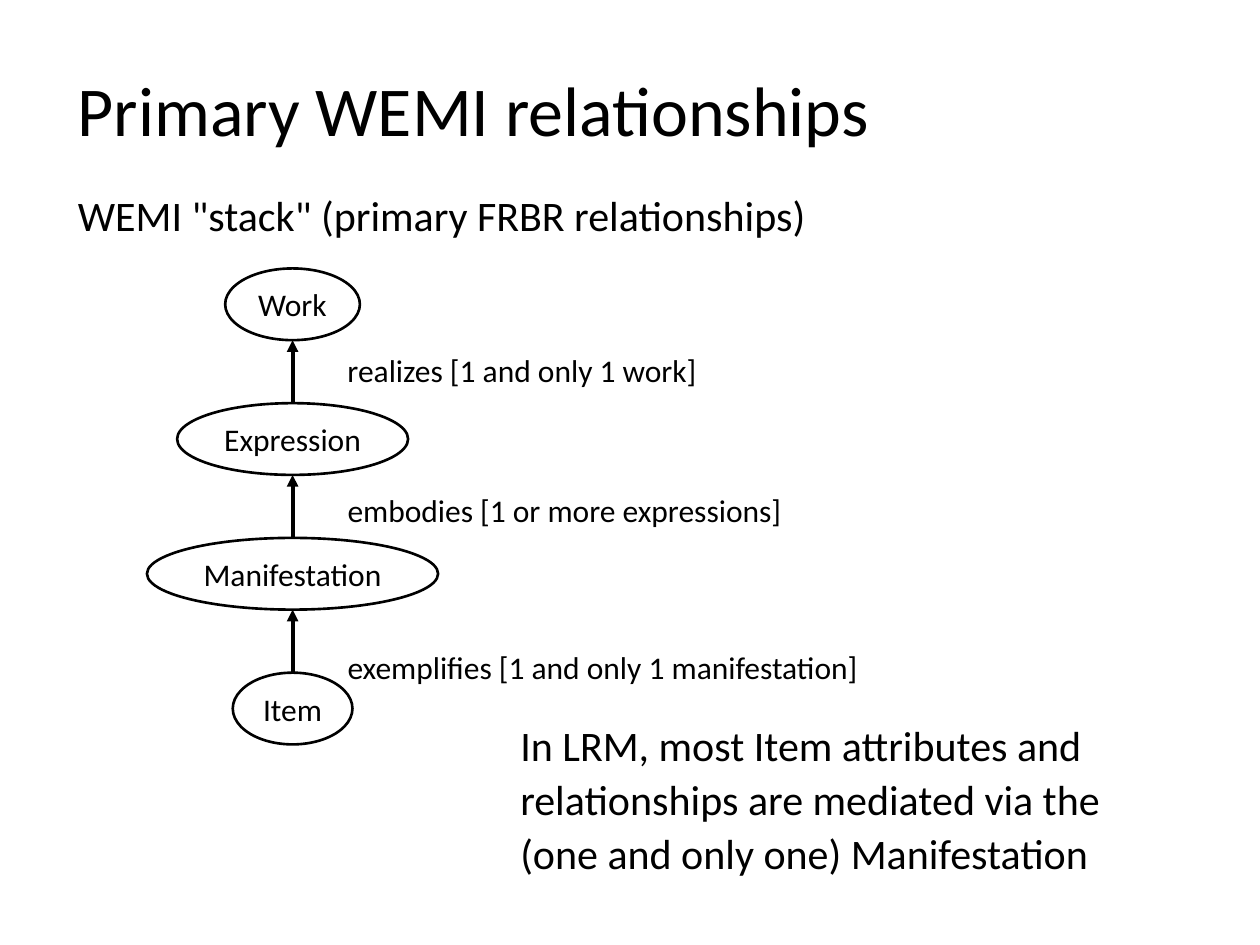
from dataclasses import dataclass

import pptx
import pptx.dml.color
import pptx.enum.shapes
import pptx.enum.text
import pptx.oxml
import pptx.oxml.ns
import pptx.util
from pptx.util import Pt

BLACK = "000000"
FONT = "Calibri"
STACK_CENTER = 167.2
STACK_TOP = 153.4
LEVEL_PITCH = 77
OVAL_HEIGHT = 41


@dataclass
class Entity:
    name: str
    width: float


@dataclass
class TextBlock:
    words: str
    left: float
    top: float
    width: float
    height: float
    size: float = 18
    wrap: bool = True
    line_spacing: float = 1.0
    space_after: float = 0


ENTITIES = [
    Entity("Work", 77),
    Entity("Expression", 132),
    Entity("Manifestation", 166.4),
    Entity("Item", 68.4),
]

TEXT_BLOCKS = [
    TextBlock("Primary WEMI relationships", 37.4, 34.6, 471.6, 55.4, 40, wrap=False),
    TextBlock('WEMI "stack" (primary FRBR relationships)', 37.4, 103, 434.2, 38.2, 24,
              wrap=False, line_spacing=1.07, space_after=8),
    TextBlock("realizes [1 and only 1 work]", 191.5, 197.3, 225.4, 29),
    TextBlock("embodies [1 or more expressions]", 191.5, 277.2, 270, 29),
    TextBlock("exemplifies [1 and only 1 manifestation]", 191.5, 366.5, 317.5, 29),
    TextBlock("In LRM, most Item attributes and relationships are mediated via the "
              "(one and only one) Manifestation", 290.2, 405.4, 390.2, 100.8, 24,
              line_spacing=1.07, space_after=8),
]


def color(hex_value: str) -> pptx.dml.color.RGBColor:
    return pptx.dml.color.RGBColor.from_string(hex_value)


def set_font(paragraph, size: float) -> None:
    paragraph.font.name = FONT
    paragraph.font.size = Pt(size)
    paragraph.font.color.rgb = color(BLACK)


def add_text(slide, block: TextBlock) -> None:
    box = slide.shapes.add_textbox(
        Pt(block.left), Pt(block.top), Pt(block.width), Pt(block.height))
    box.text_frame.word_wrap = block.wrap
    paragraph = box.text_frame.paragraphs[0]
    paragraph.text = block.words
    paragraph.line_spacing = block.line_spacing
    paragraph.space_after = Pt(block.space_after)
    set_font(paragraph, block.size)


def add_entity(slide, entity: Entity, top: float) -> None:
    oval = slide.shapes.add_shape(
        pptx.enum.shapes.MSO_SHAPE.OVAL, Pt(STACK_CENTER - entity.width / 2), Pt(top),
        Pt(entity.width), Pt(OVAL_HEIGHT))
    oval.shadow.inherit = False
    oval.fill.background()
    oval.line.color.rgb = color(BLACK)
    oval.line.width = Pt(1.5)
    oval.text_frame.word_wrap = False
    label = oval.text_frame.paragraphs[0]
    label.text = entity.name
    label.alignment = pptx.enum.text.PP_ALIGN.CENTER
    set_font(label, 18)


def add_upward_arrow(slide, bottom: float, top: float) -> None:
    arrow = slide.shapes.add_connector(
        pptx.enum.shapes.MSO_CONNECTOR.STRAIGHT,
        Pt(STACK_CENTER), Pt(bottom), Pt(STACK_CENTER), Pt(top))
    arrow.line.color.rgb = color(BLACK)
    arrow.line.width = Pt(2.25)
    head = pptx.oxml.parse_xml(
        f'<a:tailEnd {pptx.oxml.ns.nsdecls("a")} type="triangle"/>')
    arrow.line._get_or_add_ln().append(head)
    no_effects = pptx.oxml.parse_xml(f'<a:effectLst {pptx.oxml.ns.nsdecls("a")}/>')
    arrow._element.spPr.append(no_effects)


def main() -> None:
    deck = pptx.Presentation()
    deck.slide_width, deck.slide_height = Pt(720), Pt(540)
    slide = deck.slides.add_slide(deck.slide_layouts[6])

    for level, entity in enumerate(ENTITIES):
        top = STACK_TOP + level * LEVEL_PITCH
        add_entity(slide, entity, top)
        if level > 0:
            add_upward_arrow(slide, top, top - LEVEL_PITCH + OVAL_HEIGHT)
    for block in TEXT_BLOCKS:
        add_text(slide, block)

    deck.save("out.pptx")


if __name__ == "__main__":
    main()
